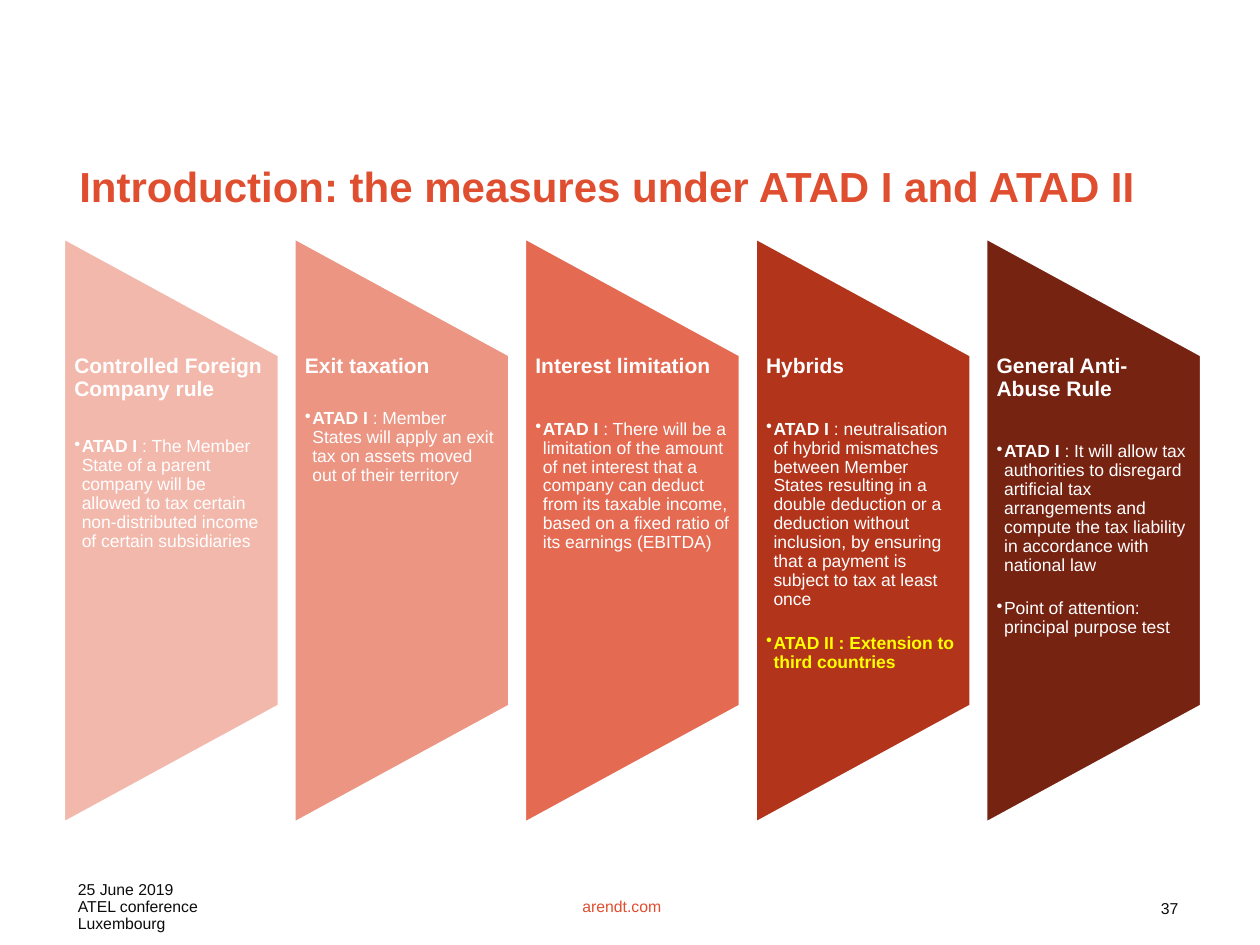
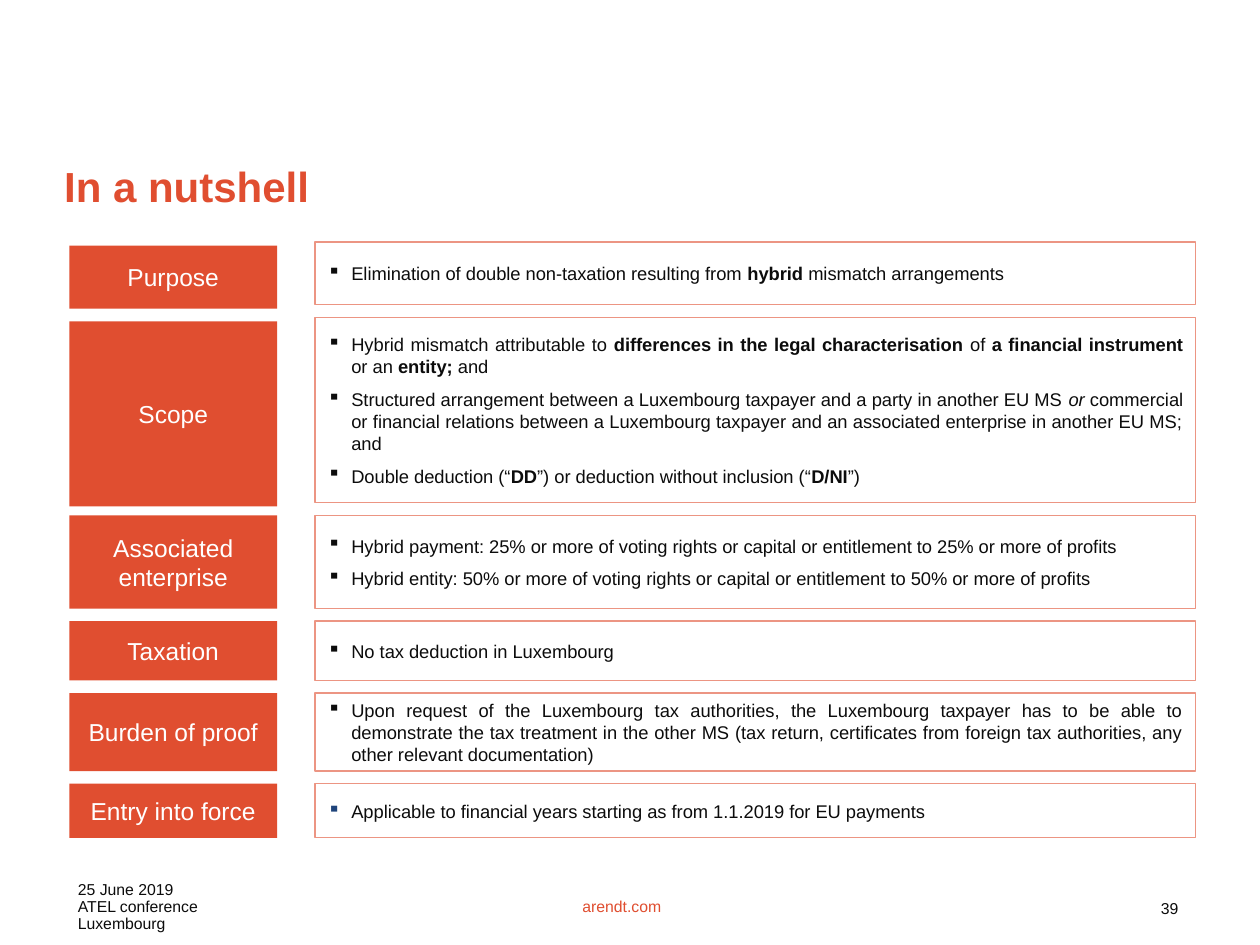
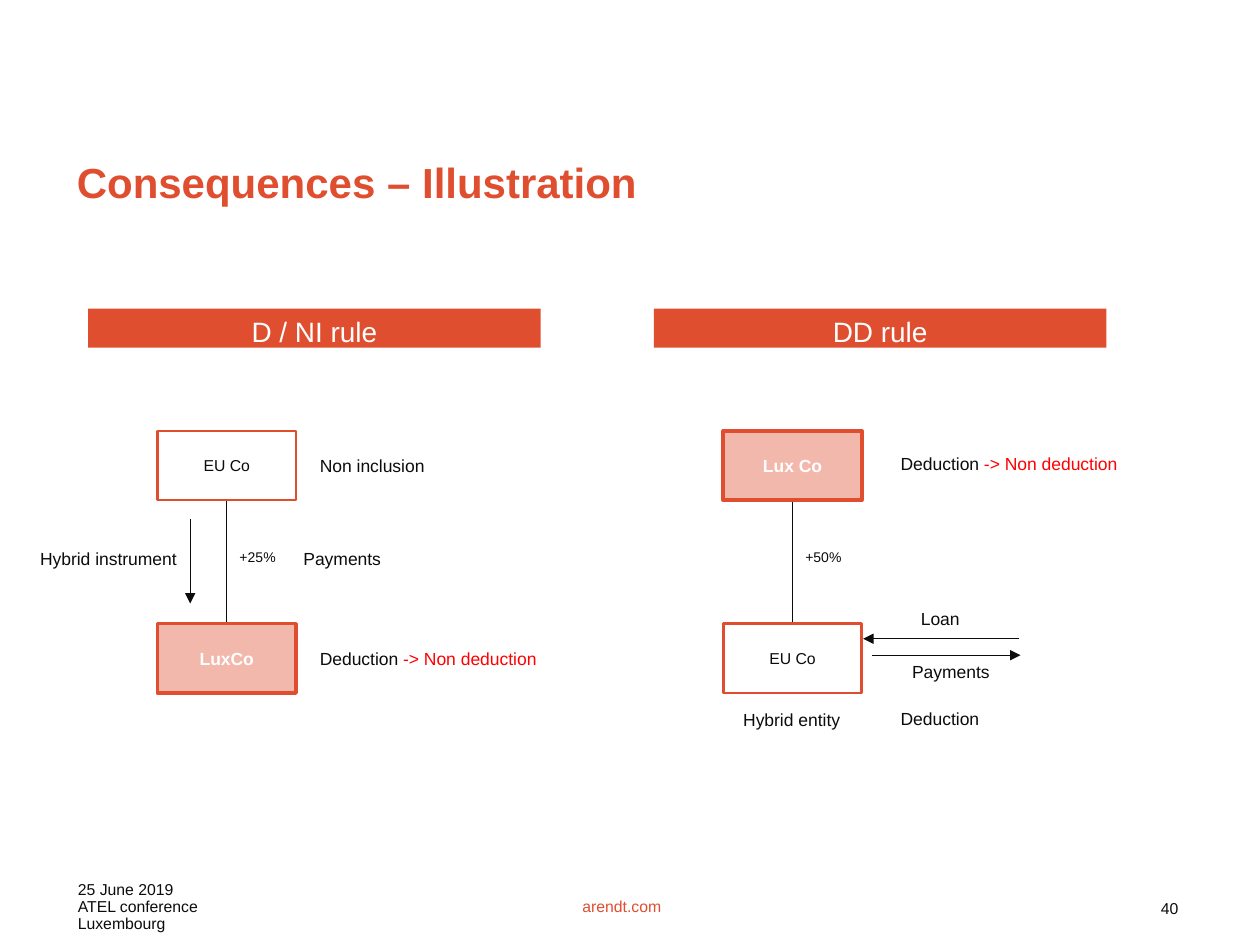
from lxml.etree import SubElement
from pptx import Presentation
from pptx.dml.color import RGBColor
from pptx.enum.shapes import MSO_CONNECTOR, MSO_SHAPE
from pptx.enum.text import MSO_ANCHOR, PP_ALIGN
from pptx.oxml.ns import qn
from pptx.util import Inches, Pt

FONT = "Arial"
ORANGE = RGBColor(0xE0, 0x4E, 0x30)
SALMON = RGBColor(0xEC, 0x95, 0x83)
PINK = RGBColor(0xF3, 0xB8, 0xAC)
CORAL = RGBColor(0xE4, 0x6A, 0x52)
BRICK = RGBColor(0xB1, 0x34, 0x1B)
MAROON = RGBColor(0x76, 0x23, 0x12)
INK = RGBColor(0x0C, 0x0C, 0x0C)
NAVY = RGBColor(0x1F, 0x44, 0x7B)
WHITE = RGBColor(0xFF, 0xFF, 0xFF)
YELLOW = RGBColor(0xFF, 0xFF, 0x00)
RED = RGBColor(0xFF, 0x00, 0x00)

BOLD = {"bold": True}
DEFAULT_INSETS = (0.1, 0.05)
TIGHT_INSETS = (0.08, 0.05)

# A paragraph is a list of runs; a run is a string or a (string, style) pair.
# Measure: fill, heading, points after the heading, bullets
MEASURES = [
    (PINK, "Controlled Foreign Company rule", 21, [
        [("ATAD I ", BOLD), ": The Member State of a parent company will be allowed to tax "
         "certain non-distributed income of certain subsidiaries"]]),
    (SALMON, "Exit taxation", 18, [
        [("ATAD I ", BOLD), ": Member States will apply an exit tax on assets moved out of "
         "their territory"]]),
    (CORAL, "Interest limitation", 24, [
        [("ATAD I ", BOLD), ": There will be a limitation of the amount of net interest that "
         "a company can deduct from its taxable income, based on a fixed ratio of its "
         "earnings (EBITDA)"]]),
    (BRICK, "Hybrids", 24, [
        [("ATAD I ", BOLD), ": neutralisation of hybrid mismatches between Member States "
         "resulting in a double deduction or a deduction without inclusion, by ensuring "
         "that a payment is subject to tax at least once"],
        [("ATAD II : Extension to third countries", {"bold": True, "color": YELLOW})]]),
    (MAROON, "General Anti-Abuse Rule", 24, [
        [("ATAD I ", BOLD), ": It will allow tax authorities to disregard artificial tax "
         "arrangements and compute the tax liability in accordance with national law"],
        ["Point of attention: principal purpose test"]]),
]

# Row: label, height, drop of the label below its box, bullet colour, bullets
NUTSHELL_ROWS = [
    ("Purpose", 0.5, 0.03, INK, [
        ["Elimination of double non-taxation resulting from ", ("hybrid ", BOLD),
         "mismatch arrangements"]]),
    ("Scope", 1.47, 0.03, INK, [
        ["Hybrid mismatch attributable to ",
         ("differences in the legal characterisation ", BOLD), "of ",
         ("a financial instrument ", BOLD), "or an ", ("entity; ", BOLD), "and"],
        ["Structured arrangement between a Luxembourg taxpayer and a party in another EU MS ",
         ("or", {"italic": True}),
         " commercial or financial relations between a Luxembourg taxpayer and an "
         "associated enterprise in another EU MS; and"],
        ["Double deduction (“", ("DD", BOLD), "”) or deduction without inclusion (“",
         ("D/NI", BOLD), "”)"]]),
    ("Associated enterprise", 0.74, 0, INK, [
        ["Hybrid payment: 25% or more of voting rights or capital or entitlement to 25% "
         "or more of profits"],
        ["Hybrid entity: 50% or more of voting rights or capital or entitlement to 50% "
         "or more of profits"]]),
    ("Taxation", 0.47, 0, INK, [["No tax deduction in Luxembourg"]]),
    ("Burden of proof", 0.62, 0, INK, [
        ["Upon request of the Luxembourg tax authorities, the Luxembourg taxpayer has to be "
         "able to demonstrate the tax treatment in the other MS (tax return, certificates "
         "from foreign tax authorities, any other relevant documentation)"]]),
    ("Entry into force", 0.43, 0, NAVY, [
        ["Applicable to financial years starting as from 1.1.2019 for EU payments"]]),
]

NON_DEDUCTION = ["Deduction ", ("-> Non deduction", {"color": RED})]
# Rule: left edge, heading, company above, company below, is the upper one highlighted, share
RULES = [
    (0.7, "D / NI rule", "EU Co", "LuxCo", False, "+25%"),
    (5.19, "DD rule", "Lux Co", "EU Co", True, "+50%"),
]
FLOW_ARROWS = [
    ((1.51, 4.12), (1.51, 4.79)),
    ((8.09, 5.07), (6.85, 5.07)),
    ((6.92, 5.2), (8.1, 5.2)),
]
# Label: left, top, width, runs
FLOW_LABELS = [
    (0.22, 4.3, 1.3, ["Hybrid instrument"]),
    (2.44, 5.09, 1.97, NON_DEDUCTION),
    (2.44, 3.56, 1.04, ["Non inclusion"]),
    (2.31, 4.3, 0.82, ["Payments"]),
    (7.05, 3.55, 1.97, NON_DEDUCTION),
    (7.05, 5.57, 0.83, ["Deduction"]),
    (7.21, 4.78, 0.51, ["Loan"]),
    (5.8, 5.58, 0.98, ["Hybrid entity"]),
    (7.14, 5.2, 0.82, ["Payments"]),
]


def set_bullet(paragraph, character, indent, color):
    properties = paragraph._p.get_or_add_pPr()
    properties.set("marL", str(Inches(indent)))
    properties.set("indent", str(-Inches(indent)))
    bullet_color = SubElement(properties, qn("a:buClr"))
    SubElement(bullet_color, qn("a:srgbClr")).set("val", str(color))
    SubElement(properties, qn("a:buChar")).set("char", character)


def add_runs(paragraph, runs, size, color, bold=False):
    for run_data in runs:
        text, style = (run_data, {}) if isinstance(run_data, str) else run_data
        run = paragraph.add_run()
        run.text = text
        run.font.name = FONT
        run.font.size = Pt(size)
        run.font.bold = style.get("bold", bold)
        run.font.italic = style.get("italic", False)
        run.font.color.rgb = style.get("color", color)


def write(shape, paragraphs, size, color, bold=False, align=PP_ALIGN.LEFT,
          anchor=MSO_ANCHOR.TOP, insets=DEFAULT_INSETS, wrap=True, line_spacing=None):
    """Fill a shape with paragraphs and return them."""
    frame = shape.text_frame
    frame.word_wrap = wrap
    frame.vertical_anchor = anchor
    frame.margin_left = frame.margin_right = Inches(insets[0])
    frame.margin_top = frame.margin_bottom = Inches(insets[1])
    for index, runs in enumerate(paragraphs):
        paragraph = frame.add_paragraph() if index else frame.paragraphs[0]
        paragraph.alignment = align
        paragraph.line_spacing = line_spacing
        add_runs(paragraph, runs, size, color, bold)
    return frame.paragraphs


def add_text(slide, left, top, width, height, paragraphs, size, color, **options):
    box = slide.shapes.add_textbox(Inches(left), Inches(top), Inches(width), Inches(height))
    return write(box, paragraphs, size, color, **options)


def add_box(slide, left, top, width, height, fill=None, line=None, line_width=0.75,
            preset=MSO_SHAPE.RECTANGLE):
    shape = slide.shapes.add_shape(preset, Inches(left), Inches(top),
                                   Inches(width), Inches(height))
    shape.shadow.inherit = False
    if fill is None:
        shape.fill.background()
    else:
        shape.fill.solid()
        shape.fill.fore_color.rgb = fill
    if line is None:
        shape.line.fill.background()
    else:
        shape.line.color.rgb = line
        shape.line.width = Pt(line_width)
    return shape


def add_line(slide, start, end, arrow=False):
    connector = slide.shapes.add_connector(
        MSO_CONNECTOR.STRAIGHT, *(Inches(value) for value in (*start, *end)))
    connector.line.color.rgb = INK
    connector.line.width = Pt(0.75)
    if arrow:
        SubElement(connector.line._get_or_add_ln(), qn("a:tailEnd")).set("type", "triangle")
    SubElement(connector._element.spPr, qn("a:effectLst"))


def start_slide(presentation, number, title, title_left, title_top):
    """Add a blank slide with its footer and title."""
    slide = presentation.slides.add_slide(presentation.slide_layouts[6])
    add_text(slide, 0.52, 6.95, 1.86, 0.41,
             [["25 June 2019"], ["ATEL conference Luxembourg"]], 9, INK, line_spacing=0.9)
    add_text(slide, 8.98, 7.08, 0.47, 0.29, [[str(number)]], 9, INK, align=PP_ALIGN.RIGHT)
    add_text(slide, 4.1, 7.02, 1.67, 0.34, [["arendt.com"]], 9, ORANGE,
             align=PP_ALIGN.CENTER, anchor=MSO_ANCHOR.MIDDLE)
    add_text(slide, title_left, title_top, 8.8, 0.71, [[title]], 24, ORANGE, bold=True,
             anchor=MSO_ANCHOR.MIDDLE, insets=(0, 0), line_spacing=0.9)
    return slide


def build_measures(presentation):
    slide = start_slide(presentation, 37, "Introduction: the measures under ATAD I and ATAD II",
                        0.63, 1.14)
    left, step, length, width = 0.51, 1.83, 4.63, 1.7
    center_y = 4.21
    for index, (fill, heading, gap, bullets) in enumerate(MEASURES):
        column = left + index * step
        panel = add_box(slide, column + (width - length) / 2, center_y - width / 2,
                        length, width, fill, WHITE, 1,
                        preset=MSO_SHAPE.FLOWCHART_MANUAL_OPERATION)
        panel.rotation = 270
        paragraphs = add_text(slide, column, 2.82, width, 2.78, [[heading]], 12, WHITE,
                              bold=True, insets=(0.08, 0), line_spacing=0.9)
        frame = slide.shapes[-1].text_frame
        paragraphs[0].space_after = Pt(gap)
        for bullet in bullets:
            paragraph = frame.add_paragraph()
            set_bullet(paragraph, "•", 0.06, YELLOW if "ATAD II" in bullet[0][0] else WHITE)
            paragraph.line_spacing = 0.9
            paragraph.space_after = Pt(14)
            add_runs(paragraph, bullet, 10, WHITE)


def build_nutshell(presentation):
    slide = start_slide(presentation, 39, "In a nutshell", 0.51, 1.14)
    top, gap = 1.92, 0.1
    for label, height, label_drop, bullet_color, bullets in NUTSHELL_ROWS:
        label_box = add_box(slide, 0.55, top + label_drop, 1.65, height, ORANGE)
        write(label_box, [[label]], 14, WHITE, align=PP_ALIGN.CENTER,
              anchor=MSO_ANCHOR.MIDDLE, insets=TIGHT_INSETS)
        details = add_box(slide, 2.5, top, 6.99, height, line=SALMON)
        paragraphs = write(details, bullets, 10.5, INK, align=PP_ALIGN.JUSTIFY,
                           anchor=MSO_ANCHOR.MIDDLE)
        for index, paragraph in enumerate(paragraphs):
            set_bullet(paragraph, "▪", 0.19, bullet_color)
            if index:
                paragraph.space_before = Pt(6)
        top += height + gap


def add_company(slide, left, top, name, highlighted):
    fill, line_width, size, color = (PINK, 2, 10, WHITE) if highlighted else (WHITE, 1.5, 9, INK)
    box = add_box(slide, left, top, 1.1, 0.55, fill, ORANGE, line_width)
    write(box, [[name]], size, color, bold=highlighted, align=PP_ALIGN.CENTER,
          anchor=MSO_ANCHOR.MIDDLE)


def build_illustration(presentation):
    slide = start_slide(presentation, 40, "Consequences – Illustration", 0.61, 1.11)
    upper_top, lower_top = 3.42, 4.95
    for left, heading, upper, lower, upper_highlighted, share in RULES:
        banner = add_box(slide, left, 2.45, 3.59, 0.31, ORANGE)
        write(banner, [[heading]], 16, WHITE, align=PP_ALIGN.CENTER, insets=TIGHT_INSETS)
        axis = left + 1.1
        add_line(slide, (axis, upper_top + 0.55), (axis, lower_top))
        add_company(slide, axis - 0.55, upper_top, upper, upper_highlighted)
        add_company(slide, axis - 0.55, lower_top, lower, not upper_highlighted)
        add_text(slide, axis, 4.3, 0.49, 0.24, [[share]], 8, INK, align=PP_ALIGN.CENTER,
                 anchor=MSO_ANCHOR.MIDDLE, wrap=False)
    for start, end in FLOW_ARROWS:
        add_line(slide, start, end, arrow=True)
    for left, top, width, runs in FLOW_LABELS:
        add_text(slide, left, top, width, 0.27, [runs], 10, INK, wrap=False)


def main():
    presentation = Presentation()
    presentation.slide_width = Inches(10)
    presentation.slide_height = Inches(7.5)
    build_measures(presentation)
    build_nutshell(presentation)
    build_illustration(presentation)
    presentation.save("out.pptx")


if __name__ == "__main__":
    main()
